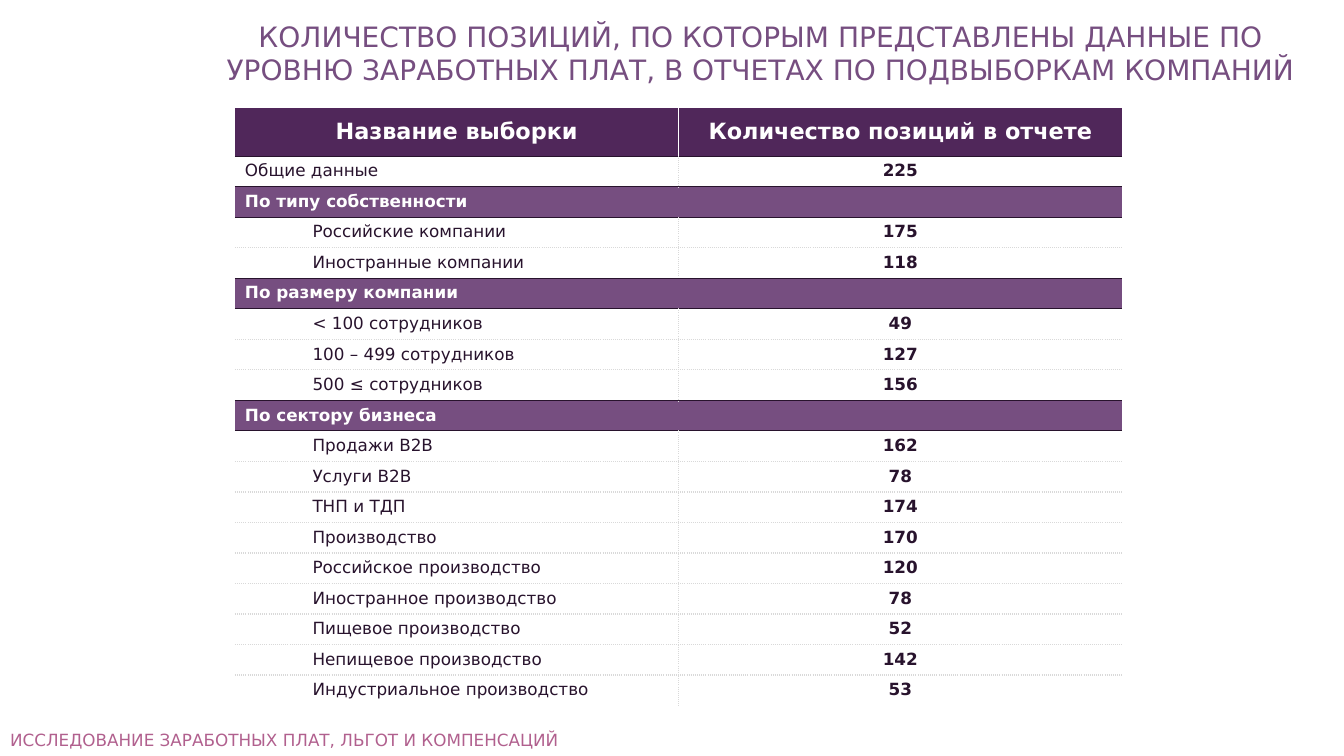
from pptx import Presentation
from pptx.dml.color import RGBColor
from pptx.enum.text import MSO_ANCHOR as ANCHOR, MSO_AUTO_SIZE as AUTOSIZE, PP_ALIGN as ALIGN
from pptx.oxml.ns import qn
from pptx.util import Inches, Pt
from lxml.etree import SubElement

FONT = "DejaVu Sans"
COLORS = {"header": "50275A", "section": "764E80", "text": "28132D",
          "footer": "B1608E", "dots": "D9D9D9", "white": "FFFFFF"}
PLAIN_TABLE = "{2D5ABB26-0587-4C30-8999-92F81FD0307C}"
SOLID = ("text", "solid")
DOTTED = ("dots", "sysDot")

TITLE = ("КОЛИЧЕСТВО ПОЗИЦИЙ, ПО КОТОРЫМ ПРЕДСТАВЛЕНЫ ДАННЫЕ ПО УРОВНЮ "
         "ЗАРАБОТНЫХ ПЛАТ, В ОТЧЕТАХ ПО ПОДВЫБОРКАМ КОМПАНИЙ")
FOOTER = "ИССЛЕДОВАНИЕ ЗАРАБОТНЫХ ПЛАТ, ЛЬГОТ И КОМПЕНСАЦИЙ"
ROWS = [
    ("header", "Название выборки", "Количество позиций в отчете"),
    ("total", "Общие данные", 225),
    ("section", "По типу собственности", None),
    ("item", "Российские компании", 175),
    ("item", "Иностранные компании", 118),
    ("section", "По размеру компании", None),
    ("item", "< 100 сотрудников", 49),
    ("item", "100 – 499 сотрудников", 127),
    ("item", "500 ≤ сотрудников", 156),
    ("section", "По сектору бизнеса", None),
    ("item", "Продажи В2В", 162),
    ("item", "Услуги В2В", 78),
    ("item", "ТНП и ТДП", 174),
    ("item", "Производство", 170),
    ("item", "Российское производство", 120),
    ("item", "Иностранное производство", 78),
    ("item", "Пищевое производство", 52),
    ("item", "Непищевое производство", 142),
    ("item", "Индустриальное производство", 53),
]


def rgb(name):
    return RGBColor.from_string(COLORS[name])


def write(tf, text, size, color, bold=False, align=ALIGN.LEFT):
    p = tf.paragraphs[0]
    p.alignment = align
    p.space_before = Pt(0)
    r = p.add_run()
    r.text = str(text)
    for key, value in {"name": FONT, "size": Pt(size), "bold": bold}.items():
        setattr(r.font, key, value)
    r.font.color.rgb = rgb(color)
    return p


def fill_placeholder(sp, box, text, size, color, align, anchor):
    sp.left, sp.top, sp.width, sp.height = map(Inches, box)
    tf = sp.text_frame
    for key, value in {"word_wrap": True, "auto_size": AUTOSIZE.NONE,
                       "vertical_anchor": anchor}.items():
        setattr(tf, key, value)
    write(tf, text, size, color, align=align)


def set_borders(cell, borders):
    """Draw the given sides, listed in the order L, R, T, B."""
    tc_pr = cell._tc.get_or_add_tcPr()
    for side, (color, dash) in borders.items():
        ln = SubElement(tc_pr, qn(f"a:ln{side}"), w=str(Pt(1)))
        fill = SubElement(ln, qn("a:solidFill"))
        SubElement(fill, qn("a:srgbClr"), val=COLORS[color])
        SubElement(ln, qn("a:prstDash"), val=dash)


def rule_between(upper, lower):
    return SOLID if {"header", "section"} & {upper, lower} else DOTTED


def cell_borders(row, col):
    kind = ROWS[row][0]
    borders = {}
    if kind != "section":
        middle = ("white", "solid") if kind == "header" else DOTTED
        borders["L" if col else "R"] = middle
    if row > 0:
        borders["T"] = rule_between(ROWS[row - 1][0], kind)
    if row < len(ROWS) - 1:
        borders["B"] = rule_between(kind, ROWS[row + 1][0])
    return borders


def format_cell(cell, row, col):
    kind, *texts = ROWS[row]
    set_borders(cell, cell_borders(row, col))
    filled = kind in ("header", "section")
    if filled:
        cell.fill.solid()
        cell.fill.fore_color.rgb = rgb(kind)
    else:
        cell.fill.background()
    if texts[col] is None:
        return
    header = kind == "header"
    cell.vertical_anchor = ANCHOR.MIDDLE if header else ANCHOR.TOP
    p = write(cell.text_frame, texts[col], 16 if header else 12,
              "white" if filled else "text", bold=filled or col == 1,
              align=ALIGN.CENTER if header or col else ALIGN.LEFT)
    if kind == "item" and col == 0:
        cell.margin_left = Inches(0.27)
        p._p.get_or_add_pPr().set("marL", str(Inches(0.5)))


def add_positions_table(s, box, header_height):
    left, top, width, height = map(Inches, box)
    table = s.shapes.add_table(len(ROWS), 2, left, top, width, height).table
    table._tbl.tblPr.find(qn("a:tableStyleId")).text = PLAIN_TABLE
    table.horz_banding = False
    head = Inches(header_height)
    for i, row in enumerate(table.rows):
        row.height = (height - head) // (len(ROWS) - 1) if i else head
        for j in range(2):
            format_cell(table.cell(i, j), i, j)
        if ROWS[i][0] == "section":
            table.cell(i, 0).merge(table.cell(i, 1))


def main():
    prs = Presentation()
    prs.slide_width, prs.slide_height = Inches(13.33), Inches(7.5)
    s = prs.slides.add_slide(prs.slide_layouts[2])
    add_positions_table(s, (2.33, 1.07, 8.8, 5.93), header_height=0.48)
    fill_placeholder(s.placeholders[1], (0, 7.18, 12.08, 0.32), FOOTER, 12,
                     "footer", ALIGN.LEFT, ANCHOR.MIDDLE)
    fill_placeholder(s.shapes.title, (2.1, 0.14, 10.89, 0.76), TITLE, 20,
                     "section", ALIGN.CENTER, ANCHOR.TOP)
    prs.save("out.pptx")


if __name__ == "__main__":
    main()
